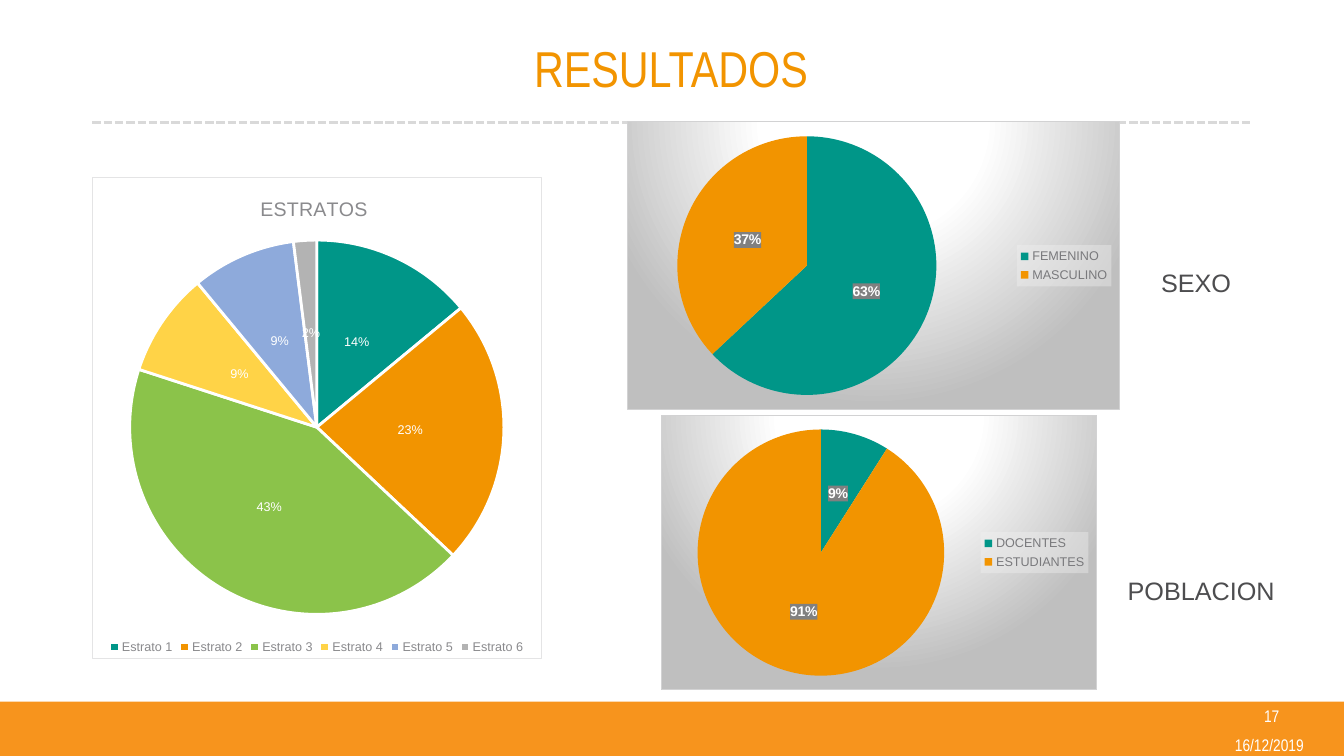
from lxml import etree
from pptx import Presentation
from pptx.chart.data import CategoryChartData
from pptx.dml.color import RGBColor
from pptx.enum import chart as ch, dml, shapes, text
from pptx.oxml import parse_xml
from pptx.oxml.ns import nsdecls, qn
from pptx.util import Cm, Pt

WHITE = RGBColor(0xFF, 0xFF, 0xFF)
BAND = RGBColor(0xF7, 0x94, 0x1D)
ORANGE = RGBColor(0xF2, 0x94, 0x00)
TEAL = RGBColor(0x00, 0x96, 0x88)
GREEN = RGBColor(0x8B, 0xC3, 0x4A)
YELLOW = RGBColor(0xFF, 0xD3, 0x47)
BLUE = RGBColor(0x8E, 0xAA, 0xDB)
SILVER = RGBColor(0xB3, 0xB3, 0xB3)
RULE = RGBColor(0xD9, 0xD9, 0xD9)
DARK = RGBColor(0x4D, 0x4D, 0x4F)
TITLE_GRAY = RGBColor(0x8A, 0x8A, 0x8D)
LEGEND_GRAY = RGBColor(0x79, 0x79, 0x7C)
FRAME = RGBColor(0xE4, 0xE4, 0xE5)
GRAD_FRAME = RGBColor(0xD2, 0xD2, 0xD3)
LABEL_BACK = RGBColor(0x80, 0x80, 0x80)
LEGEND_BACK = RGBColor(0xF2, 0xF2, 0xF2)
SLICES = [TEAL, ORANGE, GREEN, YELLOW, BLUE, SILVER]

GRADIENT = (
    '<a:gradFill><a:gsLst>'
    '<a:gs pos="0"><a:srgbClr val="FFFFFF"/></a:gs>'
    '<a:gs pos="39000"><a:srgbClr val="FFFFFF"/></a:gs>'
    '<a:gs pos="100000"><a:srgbClr val="BFBFBF"/></a:gs></a:gsLst>'
    '<a:path path="circle">'
    '<a:fillToRect l="50000" t="-80000" r="50000" b="180000"/></a:path></a:gradFill>')


def set_font(font, size, color, name="Arial", bold=False):
    font.size, font.name, font.bold = Pt(size), name, bold
    font.color.rgb = color


def add_text(s, content, x, y, w, h, size=18, color=DARK, name="Arial",
             align=text.PP_ALIGN.LEFT, anchor=text.MSO_ANCHOR.TOP, wrap=True):
    sp = s.shapes.add_textbox(Cm(x), Cm(y), Cm(w), Cm(h))
    tf = sp.text_frame
    tf.word_wrap, tf.vertical_anchor = wrap, anchor
    p = tf.paragraphs[0]
    p.alignment = align
    r = p.add_run()
    r.text = content
    set_font(r.font, size, color, name)


def add_centered(s, content, x, y, w, h, size=12, color=WHITE):
    add_text(s, content, x, y, w, h, size, color, "Arial Narrow",
             text.PP_ALIGN.CENTER, text.MSO_ANCHOR.MIDDLE)


def add_band(s):
    sp = s.shapes.add_shape(shapes.MSO_SHAPE.RECTANGLE, 0, Cm(17.68), Cm(33.87), Cm(1.42))
    sp.shadow.inherit = False
    sp.fill.solid()
    sp.fill.fore_color.rgb = BAND
    sp.line.fill.background()


def add_rule(s):
    cx = s.shapes.add_connector(shapes.MSO_CONNECTOR.STRAIGHT,
                                Cm(2.33), Cm(3.09), Cm(31.54), Cm(3.09))
    cx.line.color.rgb, cx.line.width = RULE, Pt(2)
    cx.line.dash_style = dml.MSO_LINE.SQUARE_DOT
    etree.SubElement(cx.element.spPr, qn("a:effectLst"))


def solid(color, alpha=100):
    return (f'<a:solidFill><a:srgbClr val="{color}">'
            f'<a:alpha val="{alpha * 1000}"/></a:srgbClr></a:solidFill>')


def chart_sppr(fill, border=None):
    line = f'<a:ln w="9525">{solid(border)}</a:ln>' if border else '<a:ln><a:noFill/></a:ln>'
    return parse_xml(f'<c:spPr {nsdecls("c", "a")}>{fill}{line}</c:spPr>')


def set_plot_layout(chart, x, y, w, h):
    area = chart.element.find(".//" + qn("c:plotArea"))
    for old in area.findall(qn("c:layout")):
        area.remove(old)
    area.insert(0, parse_xml(
        f'<c:layout {nsdecls("c")}><c:manualLayout><c:layoutTarget val="inner"/>'
        '<c:xMode val="edge"/><c:yMode val="edge"/>'
        f'<c:x val="{x}"/><c:y val="{y}"/><c:w val="{w}"/><c:h val="{h}"/>'
        '</c:manualLayout></c:layout>'))


def add_pie(s, box, cats, vals, legend_pos, legend_color, label_size, bold=False, title=None):
    data = CategoryChartData()
    data.categories = cats
    data.add_series("Series 1", vals)
    chart = s.shapes.add_chart(ch.XL_CHART_TYPE.PIE, *map(Cm, box), data).chart
    set_font(chart.font, 10, DARK)
    plot = chart.plots[0]
    plot.vary_by_categories = True

    # Title and legend
    chart.has_title = title is not None
    if title:
        tf = chart.chart_title.text_frame
        tf.text = title
        set_font(tf.paragraphs[0].runs[0].font, 14, TITLE_GRAY)
    chart.has_legend = True
    chart.legend.position = legend_pos
    chart.legend.include_in_layout = False
    set_font(chart.legend.font, 9, legend_color)

    # Slices
    for i, color in enumerate(SLICES[:len(cats)]):
        fmt = plot.series[0].points[i].format
        fmt.fill.solid()
        fmt.fill.fore_color.rgb = color
        if title:
            fmt.line.color.rgb, fmt.line.width = WHITE, Pt(2)
        else:
            fmt.line.fill.background()

    # Percent labels
    labels = plot.series[0].data_labels
    labels.show_percentage, labels.show_value = True, False
    labels.number_format, labels.number_format_is_linked = "0%", False
    labels.position = ch.XL_LABEL_POSITION.CENTER
    set_font(labels.font, label_size, WHITE, bold=bold)
    return chart


def add_gradient_pie(s, box, cats, vals):
    chart = add_pie(s, box, cats, vals, ch.XL_LEGEND_POSITION.RIGHT, LEGEND_GRAY, 10, bold=True)
    root = chart.element
    root.find(qn("c:chart")).addnext(chart_sppr(GRADIENT, GRAD_FRAME))
    for tag, fill in (("c:dLbls", solid(LABEL_BACK)), ("c:legend", solid(LEGEND_BACK, 39))):
        root.find(f".//{qn(tag)}/{qn('c:txPr')}").addprevious(chart_sppr(fill))
    return chart


def main():
    prs = Presentation()
    prs.slide_width, prs.slide_height = Cm(33.87), Cm(19.05)
    s = prs.slides.add_slide(prs.slide_layouts[6])

    # Frame of the slide
    add_band(s)
    add_centered(s, "16/12/2019", 30.2, 18.51, 3.58, 0.53)
    add_rule(s)
    add_centered(s, "RESULTADOS", 2.31, 0.33, 29.21, 2.74, size=36, color=ORANGE)
    add_centered(s, "17", 30.26, 17.67, 3.58, 0.76)

    # Strata
    strata = add_pie(s, (2.32, 4.46, 11.33, 12.14), [f"Estrato {n}" for n in range(1, 7)],
                     (14, 23, 43, 9, 9, 2), ch.XL_LEGEND_POSITION.BOTTOM, TITLE_GRAY, 9,
                     title="ESTRATOS ")
    strata.element.find(qn("c:chart")).addnext(chart_sppr(solid(WHITE), FRAME))

    # Population and sex
    add_gradient_pie(s, (16.65, 10.46, 11, 6.93), ("DOCENTES", "ESTUDIANTES"), (9, 91))
    sex = add_gradient_pie(s, (15.79, 3.06, 12.44, 7.27), ("FEMENINO", "MASCULINO"), (63, 37))
    set_plot_layout(sex, 0, 0.05, 0.73, 0.9)
    add_text(s, "SEXO", 29.01, 6.6, 2.29, 1.02, wrap=False)
    add_text(s, "POBLACION", 28.17, 14.37, 4.24, 1.02, wrap=False)

    prs.save("out.pptx")


if __name__ == "__main__":
    main()
